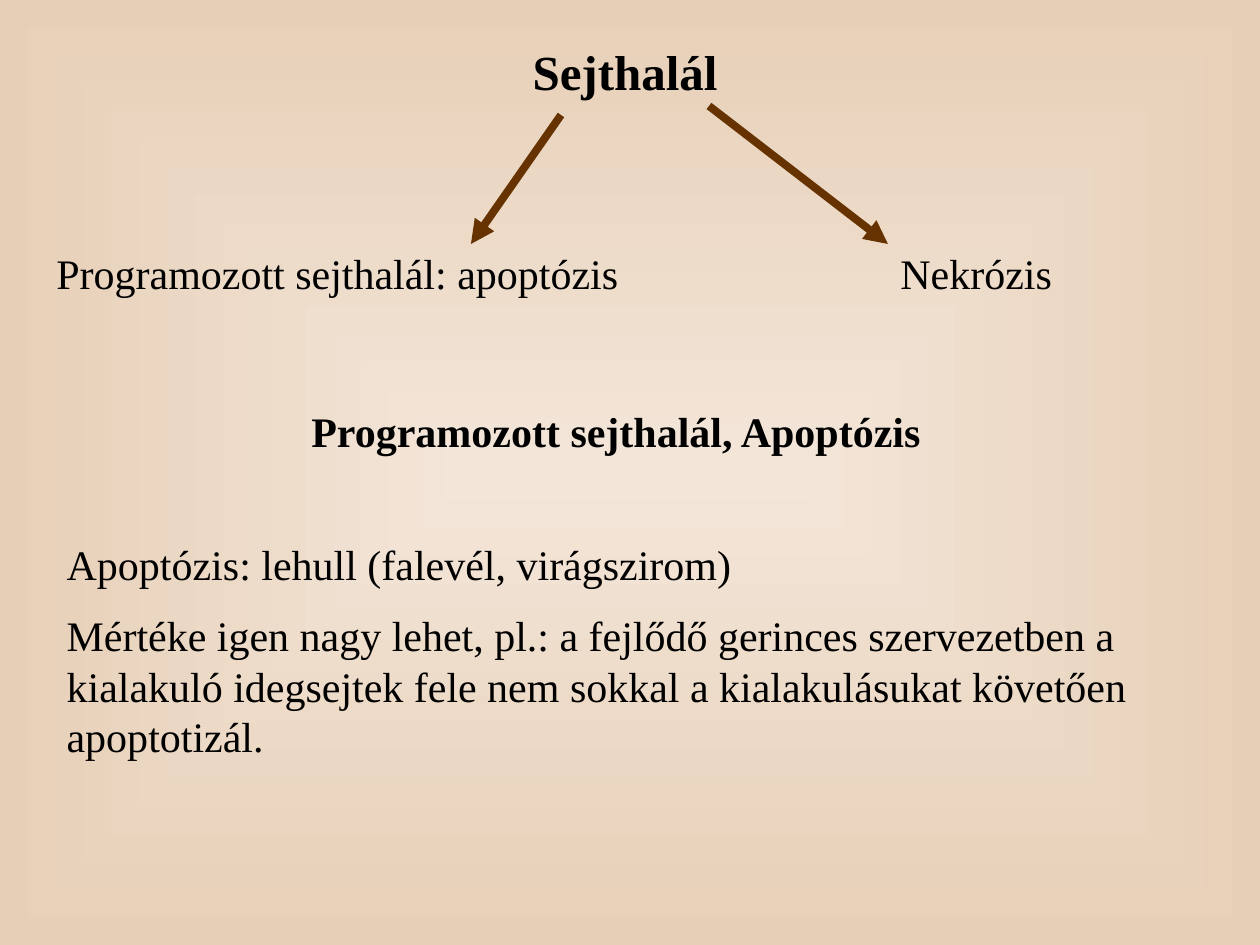
"""Build a one-page slide on cell death and apoptosis."""
from dataclasses import dataclass

from lxml import etree
from pptx import Presentation
from pptx import util as u
from pptx.dml.color import RGBColor
from pptx.enum import shapes, text
from pptx.oxml import ns

SCALE = 914400 / 126
FONT = "Times New Roman"
INK, BROWN = "000000", "663300"
CENTER, LEFT = text.PP_ALIGN.CENTER, text.PP_ALIGN.LEFT


@dataclass
class Label:
    """Text block with its place in px and its type style."""
    paragraphs: list[str]
    left: int
    top: int
    width: int
    height: int
    size: int = 24
    bold: bool = False
    align: text.PP_ALIGN = LEFT


@dataclass
class Arrow:
    """Straight arrow between two points in px."""
    start: tuple[int, int]
    end: tuple[int, int]


TITLE = Label(["Sejthalál"], 372, 35, 506, 72, 28, True, CENTER)
BODY = Label([
    "Apoptózis: lehull (falevél, virágszirom)",
    "Mértéke igen nagy lehet, pl.: a fejlődő gerinces szervezetben a kialakuló "
    "idegsejtek fele nem sokkal a kialakulásukat követően apoptotizál.",
], 54, 532, 1144, 239)
LABELS = [
    Label(["Programozott sejthalál: apoptózis"], 44, 241, 605, 63),
    Label(["Nekrózis"], 888, 241, 208, 63),
    Label(["Programozott sejthalál, Apoptózis"], 44, 399, 1144, 63,
          bold=True, align=CENTER),
]
ARROWS = [Arrow((561, 115), (471, 244)), Arrow((709, 106), (888, 244))]


def px(length: int) -> u.Emu:
    """Turn px into EMU."""
    return u.Emu(round(length * SCALE))


def color(value: str) -> RGBColor:
    """Turn a hex string into a colour."""
    return RGBColor.from_string(value)


def paint_background(page, inner: str, outer: str) -> None:
    """Fill the page with a gradient that spreads from its centre."""
    fill = page.background.fill
    fill.gradient()
    for stop, value, position in zip(fill.gradient_stops, (inner, outer), (0, 1)):
        stop.color.rgb = color(value)
        stop.position = position
    gradient = next(page.element.iter(ns.qn("a:gradFill")))
    gradient.remove(gradient.find(ns.qn("a:lin")))
    shade = etree.SubElement(gradient, ns.qn("a:path"), {"path": "shape"})
    etree.SubElement(shade, ns.qn("a:fillToRect"),
                     dict.fromkeys("ltrb", "50000"))


def write_label(box, label: Label) -> None:
    """Place a box and fill it with formatted paragraphs."""
    box.left, box.top = px(label.left), px(label.top)
    box.width, box.height = px(label.width), px(label.height)
    frame = box.text_frame
    frame.word_wrap = True
    frame.auto_size = text.MSO_AUTO_SIZE.SHAPE_TO_FIT_TEXT
    frame.vertical_anchor = text.MSO_ANCHOR.TOP
    for index, words in enumerate(label.paragraphs):
        para = frame.add_paragraph() if index else frame.paragraphs[0]
        para.alignment = label.align
        para.space_before = u.Pt(label.size / 2)
        properties = para._p.get_or_add_pPr()
        properties.set("marL", "0")
        properties.set("indent", "0")
        etree.SubElement(properties, ns.qn("a:buNone"))
        span = para.add_run()
        span.text = words
        span.font.name = FONT
        span.font.size = u.Pt(label.size)
        span.font.bold = label.bold
        span.font.color.rgb = color(INK)


def draw_arrow(page, arrow: Arrow) -> None:
    """Draw a thick line with a triangular head at its end."""
    line = page.shapes.add_connector(
        shapes.MSO_CONNECTOR.STRAIGHT,
        *map(px, arrow.start), *map(px, arrow.end))
    line.line.color.rgb = color(BROWN)
    line.line.width = u.Pt(4.5)
    etree.SubElement(line.line._get_or_add_ln(), ns.qn("a:tailEnd"),
                     {"type": "triangle"})
    etree.SubElement(line._element.spPr, ns.qn("a:effectLst"))


def main() -> None:
    """Build and save the deck."""
    deck = Presentation()
    deck.slide_width, deck.slide_height = px(1260), px(945)
    page = deck.slides.add_slide(deck.slide_layouts[1])
    paint_background(page, "F3E6D9", "E7CFB7")
    write_label(page.shapes.title, TITLE)
    write_label(page.placeholders[1], BODY)
    for label in LABELS:
        box = page.shapes.add_textbox(0, 0, px(label.width), px(label.height))
        write_label(box, label)
    for arrow in ARROWS:
        draw_arrow(page, arrow)
    deck.save("out.pptx")


if __name__ == "__main__":
    main()
